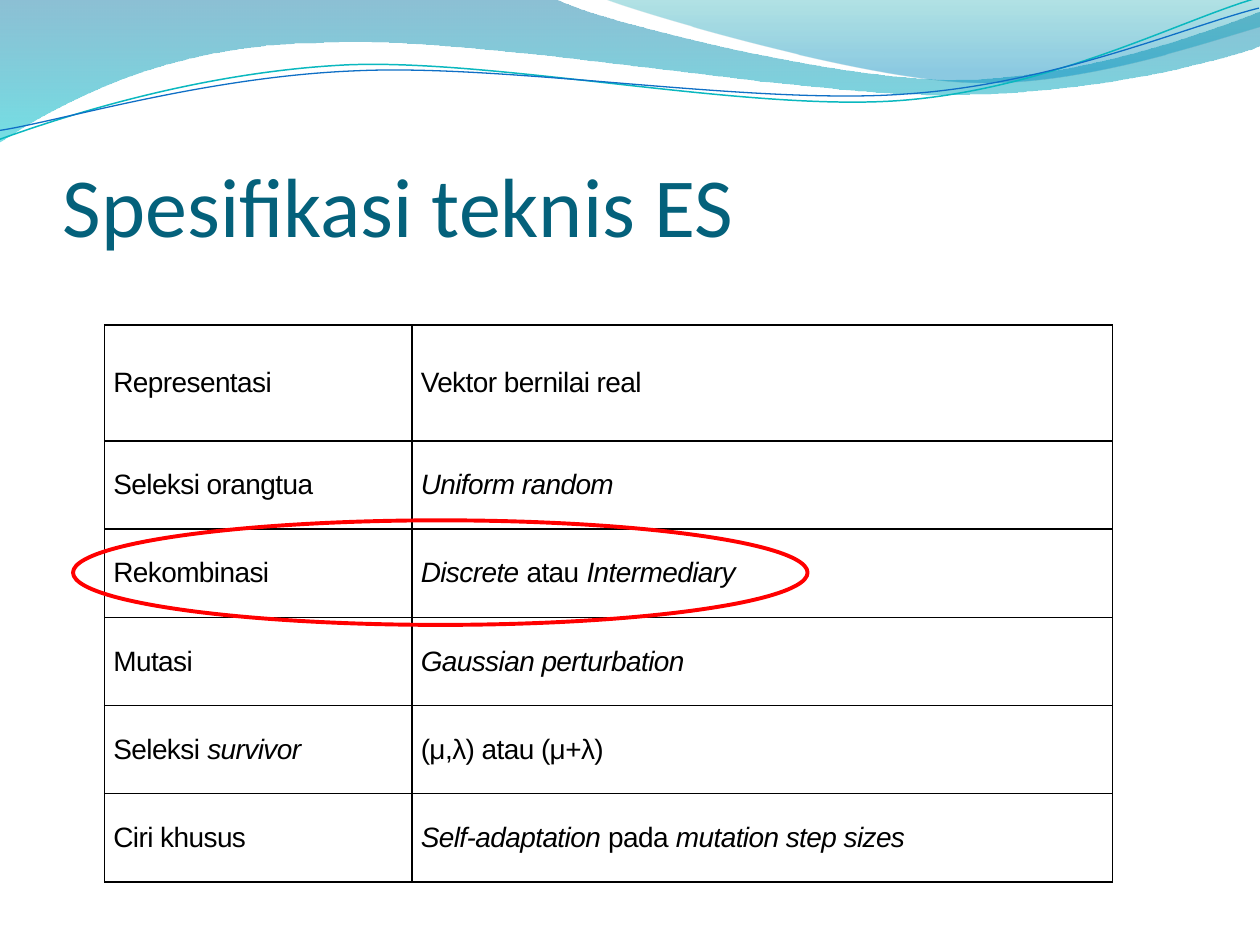
from lxml.etree import SubElement
from pptx import Presentation
from pptx.dml.color import RGBColor
from pptx.enum.shapes import MSO_SHAPE as Preset
from pptx.enum.text import MSO_ANCHOR as Anchor, PP_ALIGN as Align
from pptx.oxml import parse_xml
from pptx.oxml.ns import nsdecls, qn
from pptx.util import Pt

PX = 9144  # EMU per px, 100 px to the inch

TITLE_TEAL = RGBColor(0x04, 0x61, 0x7B)
BLACK = RGBColor(0x00, 0x00, 0x00)
RED = RGBColor(0xFF, 0x00, 0x00)
DEEP_BLUE = RGBColor(0x00, 0x74, 0xA1)
CYAN = RGBColor(0x00, 0xC6, 0xCF)
SEA_GREEN = RGBColor(0x00, 0xA1, 0xA9)
SKY_BLUE = RGBColor(0x00, 0x8B, 0xBF)
LINE_CYAN = RGBColor(0x0A, 0xB8, 0xBF)
LINE_BLUE = RGBColor(0x0F, 0x6F, 0xC6)


def apply(target, values):
    for name, value in values.items():
        setattr(target, name, value)


def draw_outline(start, segments, close):
    """Two numbers make a straight segment, six make a Bézier curve."""
    points = [segment[i:i + 2] for segment in segments for i in range(0, len(segment), 2)]
    builder = slide.shapes.build_freeform(*start, scale=PX)
    builder.add_line_segments(points, close=close)
    outline = builder.convert_to_shape()
    outline.shadow.inherit = False
    steps = iter(list(outline._element.spPr.iter(qn("a:lnTo"))))
    for segment in segments:
        step = next(steps)
        if len(segment) == 6:
            # Three straight steps become the control points of one curve
            step.tag = qn("a:cubicBezTo")
            for control in (next(steps), next(steps)):
                step.append(control[0])
                control.getparent().remove(control)
    return outline


deck = Presentation()
apply(deck, {"slide_width": 1000 * PX, "slide_height": 750 * PX})
slide = deck.slides.add_slide(deck.slide_layouts[6])

# Wave bands: start, segments, gradient stops (position, colour, opacity in %)
bands = [
    ((0, -1),
     [(440, -1), (476, 17, 664, 63, 758, 63), (853, 63, 958, 26, 1000, 9), (1001, 36),
      (983, 44, 870, 76, 746, 75), (622, 75, 382, 28, 257, 34), (129, 35, 46, 83, -1, 113),
      (0, -1)],
     [(0, DEEP_BLUE, 45), (1, CYAN, 55)]),
    ((479, -1),
     [(509, 11, 682, 62, 769, 65), (856, 69, 961, 32, 1000, 21), (1000, 0), (479, -1)],
     [(0, SEA_GREEN, 30), (0.8, SKY_BLUE, 45)]),
]
for start, segments, stops in bands:
    band = draw_outline(start, segments, close=True)
    band.line.fill.background()
    band.fill.gradient()
    band.fill.gradient_angle = 270
    for stop, (position, colour, _) in zip(band.fill.gradient_stops, stops):
        stop.position = position
        stop.color.rgb = colour
    for tint, (_, _, opacity) in zip(band._element.spPr.iter(qn("a:srgbClr")), stops):
        SubElement(tint, qn("a:alpha"), val=str(opacity * 1000))

# Thin wave lines, slightly tilted
waves = [
    ((-2, 87), [(47, 72, 158, 41, 277, 41), (396, 42, 591, 93, 712, 90),
                (832, 87, 940, 36, 1000, 22)], LINE_CYAN, 0.85),
    ((-2, 80), [(46, 75, 164, 45, 283, 46), (403, 46, 596, 88, 716, 85),
                (835, 83, 942, 42, 1001, 30)], LINE_BLUE, 0.75),
]
for start, segments, colour, width in waves:
    wave = draw_outline(start, segments, close=False)
    wave.rotation = 357.3
    wave.fill.background()
    wave.line.color.rgb = colour
    wave.line.width = Pt(width)

# Title
title = slide.shapes.add_textbox(50 * PX, 77 * PX, 900 * PX, 125 * PX).text_frame
apply(title, {"word_wrap": True, "vertical_anchor": Anchor.BOTTOM, "margin_left": 0,
              "margin_top": 5 * PX, "margin_right": 0, "margin_bottom": 0})
heading = title.paragraphs[0].add_run()
heading.text = "Spesifikasi teknis ES"
apply(heading.font, {"name": "Calibri", "size": Pt(48)})
heading.font.color.rgb = TITLE_TEAL

# Specification table: each cell is a list of (text, italic) runs
specification = [
    ([("Representasi", False)], [("Vektor bernilai real", False)]),
    ([("Seleksi orangtua", False)], [("Uniform random", True)]),
    ([("Rekombinasi", False)],
     [("Discrete", True), (" atau ", False), ("Intermediary", True)]),
    ([("Mutasi", False)], [("Gaussian perturbation", True)]),
    ([("Seleksi ", False), ("survivor", True)], [("(μ,λ) atau (μ+λ)", False)]),
    ([("Ciri khusus", False)],
     [("Self-adaptation ", True), ("pada ", False), ("mutation step sizes", True)]),
]
CELL_FORMAT = {"vertical_anchor": Anchor.MIDDLE, "margin_left": 7 * PX,
               "margin_right": 7 * PX, "margin_top": 0, "margin_bottom": 0}
PARAGRAPH_FORMAT = {"alignment": Align.JUSTIFY, "space_before": Pt(3), "space_after": Pt(6)}

table = slide.shapes.add_table(len(specification), 2, 83 * PX, 258 * PX,
                               800 * PX, 442 * PX).table
apply(table, {"first_row": False, "horz_banding": False})
for column, width in zip(table.columns, (244, 556)):
    column.width = width * PX
for row_index, (row, contents) in enumerate(zip(table.rows, specification)):
    row.height = (70 if row_index else 92) * PX
    for cell, runs in zip(row.cells, contents):
        apply(cell, CELL_FORMAT)
        cell.fill.background()
        for index, side in enumerate(("lnL", "lnR", "lnT", "lnB")):
            cell._tc.tcPr.insert(index, parse_xml(
                f'<a:{side} {nsdecls("a")} w="{Pt(1)}"><a:solidFill>'
                f'<a:srgbClr val="{BLACK}"/></a:solidFill></a:{side}>'))
        paragraph = cell.text_frame.paragraphs[0]
        apply(paragraph, PARAGRAPH_FORMAT)
        for text, italic in runs:
            run = paragraph.add_run()
            run.text = text
            apply(run.font, {"name": "Arial", "size": Pt(16), "italic": italic})
            run.font.color.rgb = BLACK
            run._r.get_or_add_rPr().set("spc", "-30")

# Ring around the recombination row
ring = slide.shapes.add_shape(Preset.OVAL, 58 * PX, 413 * PX, 583 * PX, 83 * PX)
ring.shadow.inherit = False
ring.fill.background()
ring.line.color.rgb = RED
ring.line.width = Pt(2.25)

deck.save("out.pptx")
